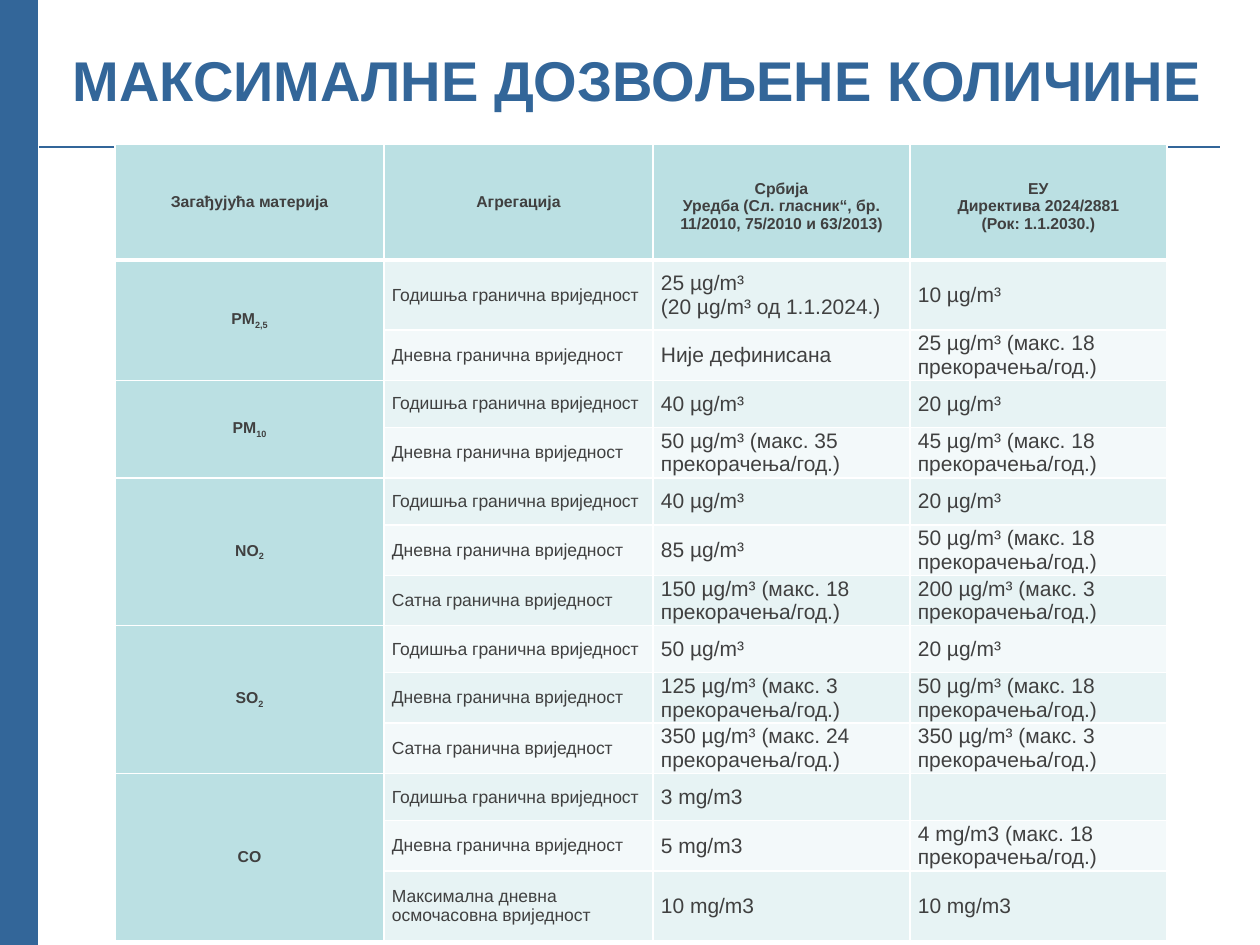
from itertools import accumulate

from lxml.etree import SubElement
from pptx import Presentation
from pptx.dml.color import RGBColor
from pptx.enum.shapes import MSO_CONNECTOR
from pptx.enum.text import MSO_ANCHOR, PP_ALIGN
from pptx.oxml import parse_xml
from pptx.oxml.ns import nsdecls, qn
from pptx.util import Pt

BLUE = RGBColor(0x33, 0x66, 0x99)
INK = RGBColor(0x40, 0x40, 0x40)
TEAL = RGBColor(0xBB, 0xE0, 0xE3)
BANDS = [RGBColor(0xF3, 0xF9, 0xFA), RGBColor(0xE7, 0xF3, 0xF4)]

TITLE = "МАКСИМАЛНЕ ДОЗВОЉЕНЕ КОЛИЧИНЕ "
HEADERS = [
    ["Загађујућа материја"],
    ["Агрегација"],
    ["Србија", "Уредба (Сл. гласник“, бр. 11/2010, 75/2010 и 63/2013)"],
    ["ЕУ", "Директива 2024/2881", "(Рок: 1.1.2030.)"],
]
YEAR = "Годишња гранична вриједност"
DAY = "Дневна гранична вриједност"
HOUR = "Сатна гранична вриједност"
MAX_8H = "Максимална дневна осмочасовна вриједност"

# (symbol, subscript, [(aggregation, Serbia, EU)])
POLLUTANTS = [
    ("PM", "2,5", [
        (YEAR, "25 µg/m³\n(20 µg/m³ од 1.1.2024.)", "10 µg/m³"),
        (DAY, "Није дефинисана", "25 µg/m³ (макс. 18 прекорачења/год.)")]),
    ("PM", "10", [
        (YEAR, "40 µg/m³", "20 µg/m³"),
        (DAY, "50 µg/m³ (макс. 35 прекорачења/год.)", "45 µg/m³ (макс. 18 прекорачења/год.)")]),
    ("NO", "2", [
        (YEAR, "40 µg/m³", "20 µg/m³"),
        (DAY, "85 µg/m³", "50 µg/m³ (макс. 18 прекорачења/год.)"),
        (HOUR, "150 µg/m³ (макс. 18 прекорачења/год.)", "200 µg/m³ (макс. 3 прекорачења/год.)")]),
    ("SO", "2", [
        (YEAR, "50 µg/m³", "20 µg/m³"),
        (DAY, "125 µg/m³ (макс. 3 прекорачења/год.)", "50 µg/m³ (макс. 18 прекорачења/год.)"),
        (HOUR, "350 µg/m³ (макс. 24 прекорачења/год.)", "350 µg/m³ (макс. 3 прекорачења/год.)")]),
    ("CO", "", [
        (YEAR, "3 mg/m3", ""),
        (DAY, "5 mg/m3", "4 mg/m3 (макс. 18 прекорачења/год.)"),
        (MAX_8H, "10 mg/m3", "10 mg/m3")]),
]
COL_W = [269, 269, 257, 257]
HEADER_H, TALL_H, YEAR_H, ROW_H = 116, 70, 47, 49
TABLE_X, TABLE_Y = 115, 144


def px(n):
    return round(n * 914400 / 126)


def add_run(p, text, size, color=INK, bold=False):
    r = p.add_run()
    r.text = text
    for name, value in {"size": Pt(size), "name": "Arial", "bold": bold}.items():
        setattr(r.font, name, value)
    r.font.color.rgb = color
    return r


def add_line(slide, x1, y1, x2, y2, width):
    line = slide.shapes.add_connector(MSO_CONNECTOR.STRAIGHT, px(x1), px(y1), px(x2), px(y2))
    line.line.color.rgb = BLUE
    line.line.width = Pt(width)
    SubElement(line._element.spPr, qn("a:effectLst"))


def style_cell(cell, fill, top=1, bottom=1):
    """Fill the cell and give it white borders, widths in points."""
    cell.fill.solid()
    cell.fill.fore_color.rgb = fill
    cell.vertical_anchor = MSO_ANCHOR.MIDDLE
    margins = {"margin_left": 8, "margin_right": 8, "margin_top": 0, "margin_bottom": 0}
    for name, value in margins.items():
        setattr(cell, name, px(value))
    tc_pr = cell._tc.get_or_add_tcPr()
    for i, (side, width) in enumerate(zip("LRTB", (1, 1, top, bottom))):
        tc_pr.insert(i, parse_xml(
            f'<a:ln{side} {nsdecls("a")} w="{Pt(width)}"><a:solidFill>'
            f'<a:srgbClr val="FFFFFF"/></a:solidFill></a:ln{side}>'))


def write_lines(cell, lines, size, bold=False, align=PP_ALIGN.LEFT):
    tf = cell.text_frame
    for i, text in enumerate(lines):
        p = tf.add_paragraph() if i else tf.paragraphs[0]
        p.alignment = align
        add_run(p, text, size, bold=bold)


def add_title(slide):
    tf = slide.shapes.add_textbox(px(59), 0, px(1172), px(158)).text_frame
    tf.word_wrap = True
    tf.vertical_anchor = MSO_ANCHOR.MIDDLE
    p = tf.paragraphs[0]
    p.alignment = PP_ALIGN.CENTER
    add_run(p, TITLE, 32, BLUE, True)


def add_limits_table(slide):
    rows = [row for _, _, group in POLLUTANTS for row in group]
    heights = [HEADER_H] + [YEAR_H if row[0] == YEAR else ROW_H for row in rows]
    heights[1] = heights[-1] = TALL_H
    table = slide.shapes.add_table(
        len(heights), len(COL_W), px(TABLE_X), px(TABLE_Y),
        px(sum(COL_W)), px(sum(heights))).table
    for col, width in zip(table.columns, COL_W):
        col.width = px(width)
    for row, height in zip(table.rows, heights):
        row.height = px(height)

    for c, lines in enumerate(HEADERS):
        cell = table.cell(0, c)
        style_cell(cell, TEAL, bottom=3)
        write_lines(cell, lines, 9, True, PP_ALIGN.CENTER)
        if len(lines) > 1:
            cell.vertical_anchor = MSO_ANCHOR.TOP
            cell.margin_top = px(36)

    for r, values in enumerate(rows, 1):
        top = 3 if r == 1 else 1
        style_cell(table.cell(r, 0), TEAL, top)
        for c, (text, size) in enumerate(zip(values, (10, 12, 12)), 1):
            style_cell(table.cell(r, c), BANDS[r % 2], top)
            write_lines(table.cell(r, c), text.split("\n"), size)

    starts = accumulate((len(group) for _, _, group in POLLUTANTS), initial=1)
    for start, (symbol, sub, group) in zip(starts, POLLUTANTS):
        cell = table.cell(start, 0)
        cell.merge(table.cell(start + len(group) - 1, 0))
        write_lines(cell, [symbol], 9, True, PP_ALIGN.CENTER)
        if sub:
            r = add_run(cell.text_frame.paragraphs[0], sub, 9, bold=True)
            r.font._element.set("baseline", "-25000")


def main():
    prs = Presentation()
    prs.slide_width, prs.slide_height = px(1260), px(945)
    slide = prs.slides.add_slide(prs.slide_layouts[6])
    add_line(slide, 3, 0, 3, 945, 40)
    add_line(slide, 39, 147, 1220, 147, 0.75)
    add_title(slide)
    add_limits_table(slide)
    prs.save("out.pptx")


if __name__ == "__main__":
    main()
